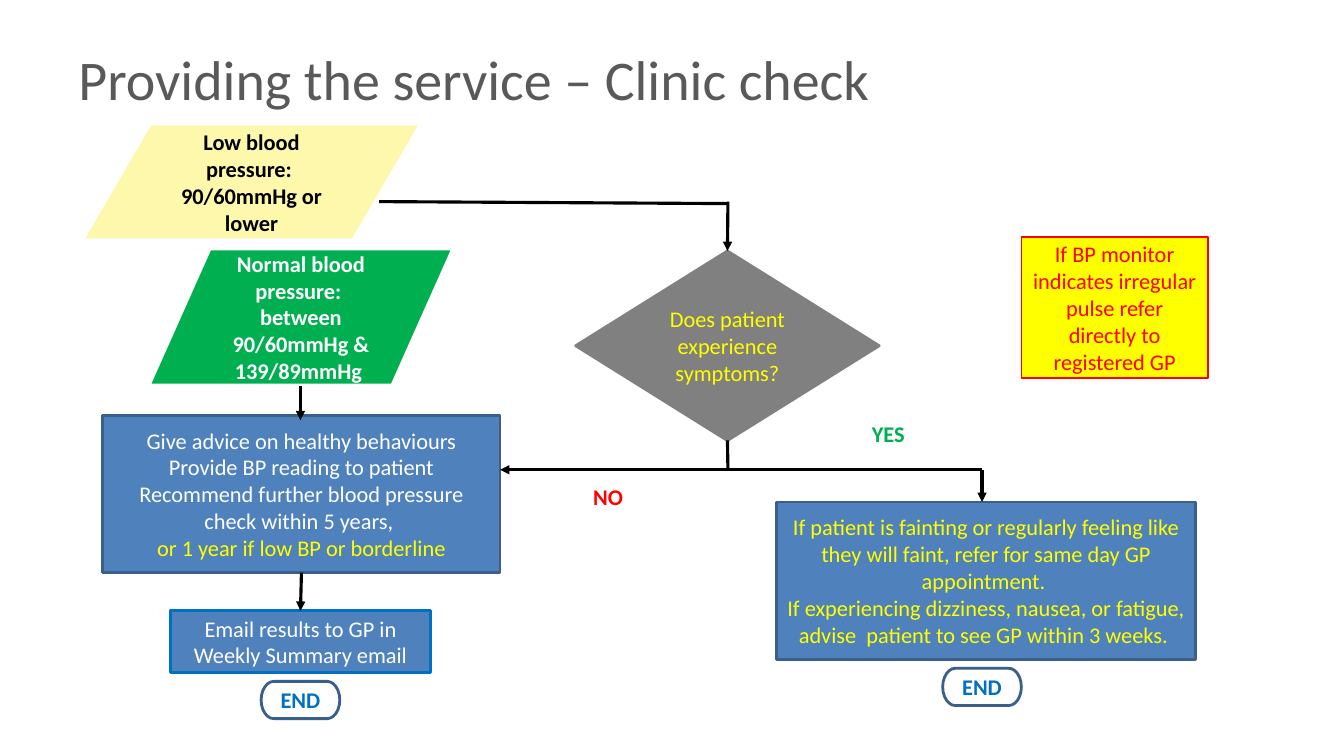
from dataclasses import dataclass
from typing import Optional

from lxml.etree import SubElement
from pptx import Presentation
from pptx.dml.color import RGBColor
from pptx.enum.shapes import MSO_CONNECTOR as Conn, MSO_SHAPE as Shape
from pptx.enum.text import MSO_ANCHOR as Anchor, PP_ALIGN as Align
from pptx.oxml.ns import qn
from pptx.util import Inches, Pt


@dataclass(frozen=True)
class Theme:
    """Colours, font and sizes of the flowchart."""
    font: str = "Calibri"
    title_size: float = 40
    body_size: float = 16
    outline: float = 2
    arrow: float = 2.25
    title: str = "595959"
    black: str = "000000"
    white: str = "FFFFFF"
    cream: str = "FEF8AC"
    green: str = "00B050"
    blue: str = "4F81BD"
    navy: str = "3A5F8C"
    azure: str = "0070C0"
    grey: str = "808080"
    yellow: str = "FFFF00"
    red: str = "FF0000"


T = Theme()


@dataclass(frozen=True)
class Node:
    """A filled flowchart step; the last line may have its own colour."""
    key: str
    kind: Shape
    box: tuple[float, float, float, float]
    lines: tuple[str, ...]
    fill: str
    line: str
    color: str
    bold: bool = False
    last_color: Optional[str] = None
    width: float = T.outline


@dataclass(frozen=True)
class Label:
    """A text without a frame."""
    text: str
    box: tuple[float, float, float, float]
    color: str
    size: float = T.body_size
    bold: bool = True
    align: Align = Align.CENTER
    anchor: Anchor = Anchor.TOP


@dataclass(frozen=True)
class Link:
    """A straight line, optionally joined to (node key, side)."""
    start: tuple[float, float]
    end: tuple[float, float]
    arrow: bool = False
    begin_at: Optional[tuple[str, int]] = None
    end_at: Optional[tuple[str, int]] = None


NODES = (
    Node("low", Shape.FLOWCHART_DATA, (0.82, 1.23, 3.35, 1.15),
         ("Low blood pressure: ", "90/60mmHg or lower"), T.cream, T.white, T.black, True),
    Node("normal", Shape.FLOWCHART_DATA, (1.48, 2.47, 3.01, 1.35),
         ("Normal blood pressure: ", "between 90/60mmHg & 139/89mmHg "),
         T.green, T.white, T.white, True),
    Node("advice", Shape.RECTANGLE, (1.02, 4.12, 3.94, 1.56),
         ("Give advice on healthy behaviours", "Provide BP reading to patient",
          "Recommend further blood pressure check within 5 years, ",
          "or 1 year if low BP or borderline"),
         T.blue, T.navy, T.white, last_color=T.yellow),
    Node("symptoms", Shape.FLOWCHART_DECISION, (5.71, 2.49, 3.01, 1.88),
         ("Does patient experience symptoms?",), T.grey, T.grey, T.yellow),
    Node("referral", Shape.RECTANGLE, (7.7, 4.98, 4.16, 1.56),
         ("If patient is fainting or regularly feeling like they will faint, "
          "refer for same day GP appointment. ",
          "If experiencing dizziness, nausea, or fatigue, advise  patient to see GP "
          "within 3 weeks. "), T.blue, T.navy, T.yellow),
    Node("email", Shape.RECTANGLE, (1.69, 6.06, 2.58, 0.61),
         ("Email results to GP in Weekly Summary email",), T.blue, T.azure, T.white),
    Node("referral end", Shape.FLOWCHART_TERMINATOR, (9.35, 6.63, 0.78, 0.37),
         ("END",), T.white, T.navy, T.azure, True),
    Node("email end", Shape.FLOWCHART_TERMINATOR, (2.59, 6.76, 0.78, 0.37),
         ("END",), T.white, T.navy, T.azure, True),
    Node("pulse", Shape.RECTANGLE, (10.13, 2.35, 1.85, 1.4),
         ("If BP monitor indicates irregular pulse refer directly to registered GP",),
         T.yellow, T.red, T.red, width=1),
)

LABELS = (
    Label("Providing the service – Clinic check", (0.68, 0.08, 10.79, 1.4), T.title,
          T.title_size, False, Align.LEFT, Anchor.MIDDLE),
    Label("NO", (5.69, 4.74, 0.68, 0.37), T.red),
    Label("YES", (8.47, 4.12, 0.68, 0.37), T.green),
)

FORK = (7.22, 4.66)
LINKS = (
    Link((2.98, 3.83), (2.98, 4.17), True),
    Link((3.76, 2), (7.22, 2.02)),
    Link((7.22, 2), (7.22, 2.49), True, end_at=("symptoms", 0)),
    Link((7.22, 4.37), FORK, begin_at=("symptoms", 2)),
    Link(FORK, (9.74, 4.66)),
    Link(FORK, (4.96, 4.66), True),
    Link((9.74, 4.66), (9.74, 4.98), True),
    Link((2.99, 5.68), (2.98, 6.06), True, ("advice", 2), ("email", 0)),
)


def rgb(color: str) -> RGBColor:
    """Turn a hex string into a colour."""
    return RGBColor.from_string(color)


def style_text(tf, color: str, size: float, bold: bool, align: Align, anchor: Anchor) -> None:
    """Format every paragraph and run of a text frame."""
    tf.word_wrap = True
    tf.vertical_anchor = anchor
    for p in tf.paragraphs:
        p.alignment = align
        for r in p.runs:
            r.font.name, r.font.size, r.font.bold = T.font, Pt(size), bold
            r.font.color.rgb = rgb(color)


def add_node(s, node: Node):
    """Draw one flowchart step."""
    sp = s.shapes.add_shape(node.kind, *map(Inches, node.box))
    sp.shadow.inherit = False
    sp.fill.solid()
    sp.fill.fore_color.rgb = rgb(node.fill)
    sp.line.color.rgb = rgb(node.line)
    sp.line.width = Pt(node.width)
    tf = sp.text_frame
    tf.text = "\n".join(node.lines)
    style_text(tf, node.color, T.body_size, node.bold, Align.CENTER, Anchor.MIDDLE)
    if node.last_color:
        tf.paragraphs[-1].runs[0].font.color.rgb = rgb(node.last_color)
    return sp


def add_label(s, label: Label) -> None:
    """Draw one frameless text."""
    tf = s.shapes.add_textbox(*map(Inches, label.box)).text_frame
    tf.text = label.text
    style_text(tf, label.color, label.size, label.bold, label.align, label.anchor)


def add_link(s, link: Link, nodes: dict) -> None:
    """Draw one flow line and join it to its steps."""
    c = s.shapes.add_connector(Conn.STRAIGHT, *map(Inches, link.start + link.end))
    if link.begin_at:
        c.begin_connect(nodes[link.begin_at[0]], link.begin_at[1])
    if link.end_at:
        c.end_connect(nodes[link.end_at[0]], link.end_at[1])
    c.line.color.rgb = rgb(T.black)
    c.line.width = Pt(T.arrow)
    if link.arrow:
        SubElement(c.line._get_or_add_ln(), qn("a:tailEnd"), type="triangle")
    SubElement(c._element.spPr, qn("a:effectLst"))


def main() -> None:
    """Build the clinic check slide."""
    prs = Presentation()
    prs.slide_width, prs.slide_height = Inches(13.33), Inches(7.5)
    s = prs.slides.add_slide(prs.slide_layouts[6])
    for label in LABELS:
        add_label(s, label)
    nodes = {node.key: add_node(s, node) for node in NODES}
    for link in LINKS:
        add_link(s, link, nodes)
    prs.save("out.pptx")


if __name__ == "__main__":
    main()
